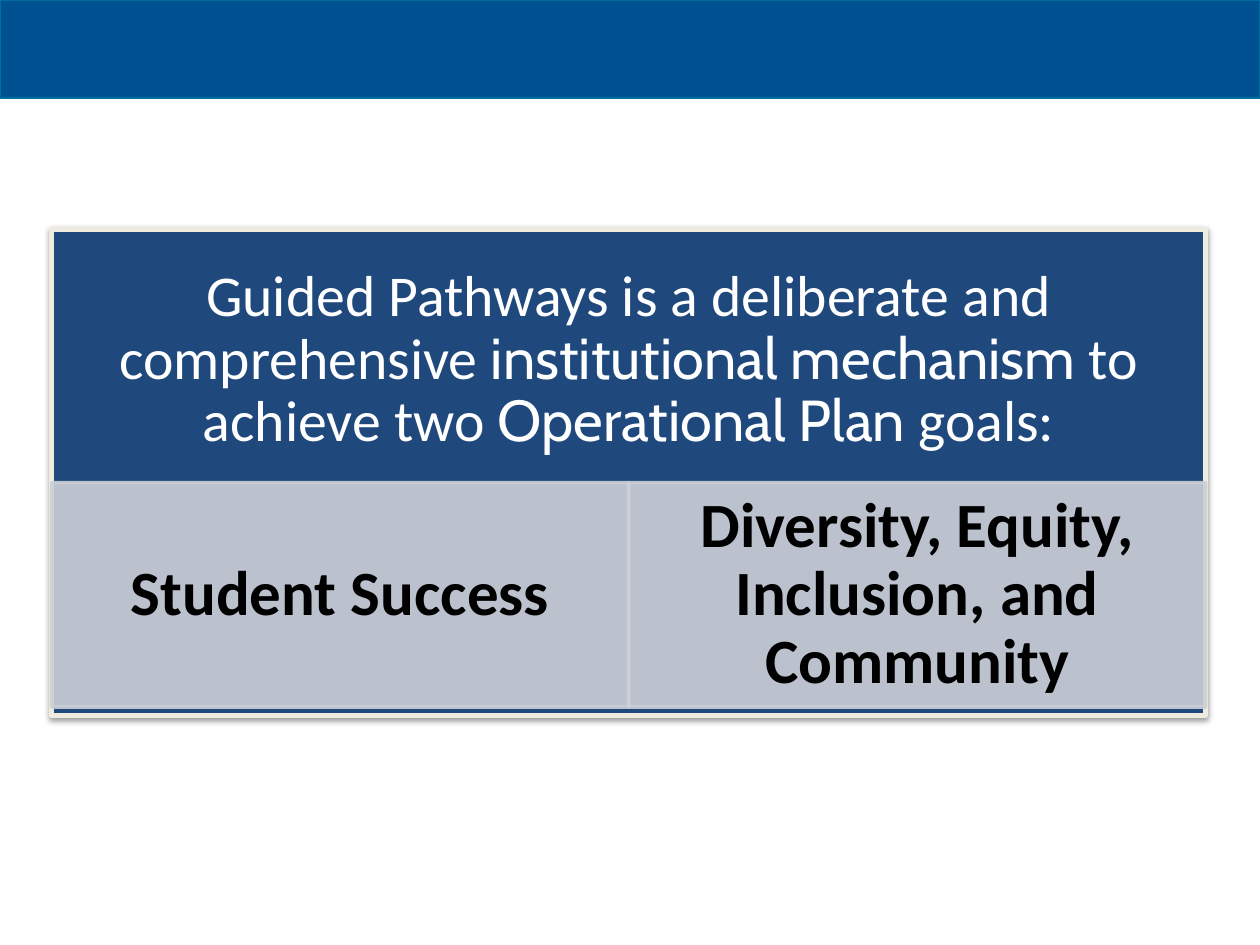
from dataclasses import dataclass

from lxml.etree import SubElement
from pptx import Presentation
from pptx.dml.color import RGBColor
from pptx.enum.shapes import MSO_SHAPE as Shape
from pptx.enum.text import MSO_ANCHOR as Anchor, PP_ALIGN as Align
from pptx.oxml.ns import qn
from pptx.util import Pt

BANNER_BLUE = RGBColor(0x00, 0x51, 0x92)
BANNER_EDGE = RGBColor(0x00, 0x6F, 0x9B)
NAVY = RGBColor(0x1F, 0x49, 0x7D)
CREAM = RGBColor(0xEE, 0xEC, 0xE1)
GREY = RGBColor(0xCD, 0xD0, 0xD7)
WHITE = RGBColor(0xFF, 0xFF, 0xFF)
BLACK = RGBColor(0x00, 0x00, 0x00)

PANEL_LEFT, PANEL_TOP, PANEL_WIDTH, PANEL_HEIGHT = 29.5, 131, 659.5, 278
HEADING_HEIGHT = 150
GOAL_TOP, GOAL_HEIGHT = 275.8, 128.2

HEADING = [
    ("Guided Pathways is a deliberate and comprehensive", "Calibri"),
    (" institutional mechanism", "Cabin"),
    (" to achieve two", "Calibri"),
    (" Operational Plan", "Cabin"),
    (" goals:", "Calibri"),
]
GOALS = ["Student Success", "Diversity, Equity, Inclusion, and Community"]


@dataclass
class Area:
    left: float
    top: float
    width: float
    height: float

    def lengths(self) -> list:
        return [Pt(value) for value in (self.left, self.top, self.width, self.height)]


def add_block(page, area: Area, fill: RGBColor, edge: RGBColor, weight: float):
    block = page.shapes.add_shape(Shape.RECTANGLE, *area.lengths())
    block.shadow.inherit = False
    block.fill.solid()
    block.fill.fore_color.rgb = fill
    block.line.color.rgb = edge
    block.line.width = Pt(weight)
    return block


def add_shadow(block) -> None:
    """Cast a soft shadow straight down."""
    effects = block._element.spPr.find(qn("a:effectLst"))
    shadow = SubElement(effects, qn("a:outerShdw"), blurRad=str(Pt(3.1)),
                        dist=str(Pt(1.6)), dir="5400000", rotWithShape="0")
    color = SubElement(shadow, qn("a:srgbClr"), val=str(BLACK))
    SubElement(color, qn("a:alpha"), val="38000")


def make_translucent(block, percent: int) -> None:
    """Apply the opacity to both fill and line."""
    for color in block._element.spPr.iter(qn("a:srgbClr")):
        SubElement(color, qn("a:alpha"), val=str(percent * 1000))


def centre_text(box, side: float, edge: float):
    """Prepare a wrapped, centred frame and return its paragraph."""
    frame = box.text_frame
    frame.word_wrap = True
    frame.vertical_anchor = Anchor.MIDDLE
    frame.margin_left = frame.margin_right = Pt(side)
    frame.margin_top = frame.margin_bottom = Pt(edge)
    para = frame.paragraphs[0]
    para.alignment = Align.CENTER
    para.line_spacing = 0.9
    return para


def add_heading(page, area: Area) -> None:
    para = centre_text(page.shapes.add_textbox(*area.lengths()), 18.5, 18.5)
    for text, typeface in HEADING:
        span = para.add_run()
        span.text = text
        span.font.name = typeface
        span.font.size = Pt(33)
        span.font.color.rgb = WHITE


def add_goal(page, area: Area, text: str) -> None:
    block = add_block(page, area, GREY, GREY, 2)
    make_translucent(block, 90)
    para = centre_text(block, 20, 3.6)
    para.text = text
    para.font.name = "Calibri"
    para.font.size = Pt(36)
    para.font.bold = True
    para.font.color.rgb = BLACK


def main() -> None:
    deck = Presentation()
    deck.slide_width, deck.slide_height = Pt(720), Pt(540)
    page = deck.slides.add_slide(deck.slide_layouts[6])

    add_block(page, Area(0, 0, 720, 56), BANNER_BLUE, BANNER_EDGE, 0.75)
    panel = Area(PANEL_LEFT, PANEL_TOP, PANEL_WIDTH, PANEL_HEIGHT)
    add_shadow(add_block(page, panel, NAVY, CREAM, 3))
    add_heading(page, Area(PANEL_LEFT, PANEL_TOP, PANEL_WIDTH, HEADING_HEIGHT))

    goal_width = PANEL_WIDTH / len(GOALS)
    for index, goal in enumerate(GOALS):
        left = PANEL_LEFT + index * goal_width
        add_goal(page, Area(left, GOAL_TOP, goal_width, GOAL_HEIGHT), goal)

    deck.save("out.pptx")


if __name__ == "__main__":
    main()
